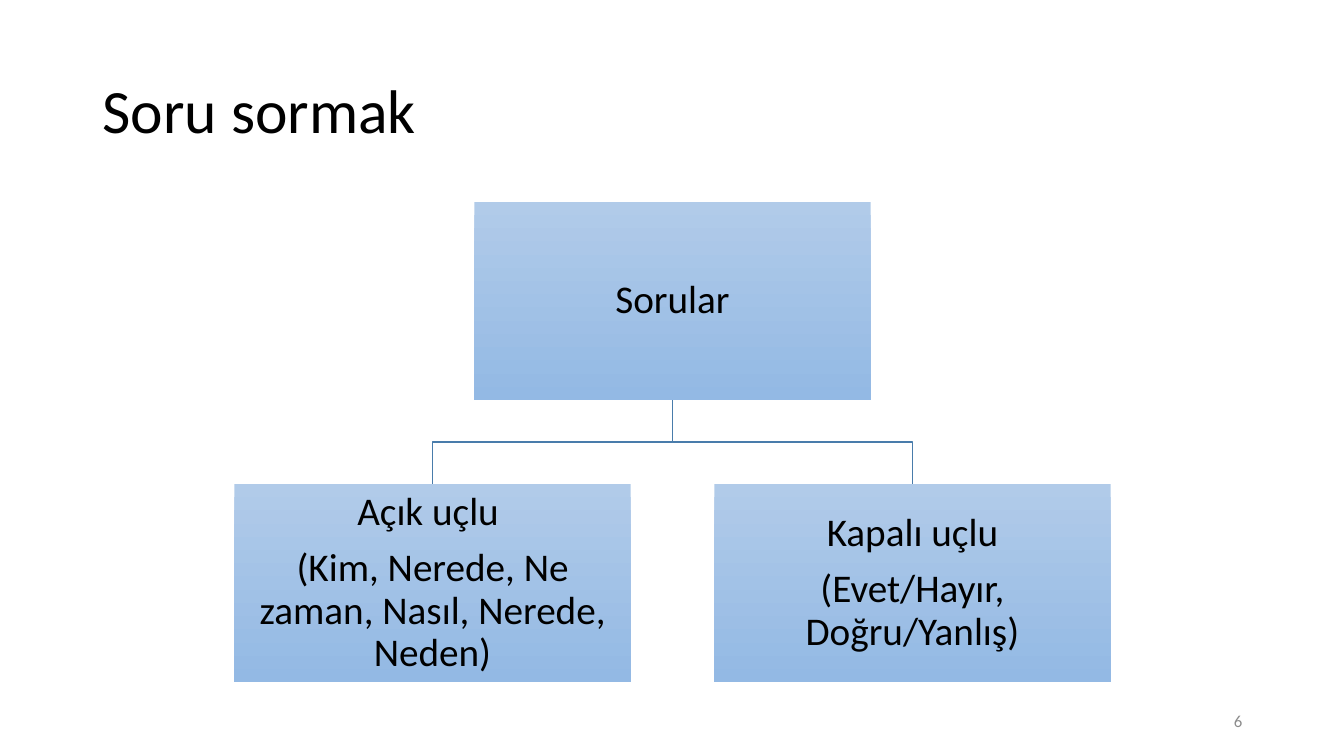
from pptx import Presentation
from pptx.dml.color import RGBColor
from pptx.enum.shapes import MSO_SHAPE
from pptx.enum.text import MSO_ANCHOR, PP_ALIGN
from pptx.util import Inches, Pt

BLACK = RGBColor(0x00, 0x00, 0x00)
GREY = RGBColor(0x8C, 0x8C, 0x8C)
LINE_BLUE = RGBColor(0x49, 0x7C, 0xAB)
GRADIENT = (RGBColor(0xB1, 0xCB, 0xE9), RGBColor(0x93, 0xB9, 0xE4))

BOX_WIDTH, BOX_HEIGHT = 3.93, 1.97
COLUMN_GAP, ROW_GAP = 0.83, 0.83
ROOT = ["Sorular"]
BRANCHES = [
    ["Açık uçlu ", "(Kim, Nerede, Ne zaman, Nasıl, Nerede, Neden)"],
    ["Kapalı uçlu", "(Evet/Hayır, Doğru/Yanlış)"],
]


def write_text(shape, lines, size, color, alignment, line_spacing=0.9, space_after=0):
    """Fill a shape with vertically centred paragraphs of one style."""
    frame = shape.text_frame
    frame.word_wrap = True
    frame.vertical_anchor = MSO_ANCHOR.MIDDLE
    frame.text = "\n".join(lines)
    for paragraph in frame.paragraphs:
        paragraph.alignment = alignment
        paragraph.line_spacing = line_spacing
        paragraph.space_after = Pt(space_after)
        paragraph.font.name = "Calibri"
        paragraph.font.size = Pt(size)
        paragraph.font.color.rgb = color


def add_label(slide, left, top, width, height, text, **style):
    """Add a plain text box."""
    label = slide.shapes.add_textbox(Inches(left), Inches(top), Inches(width), Inches(height))
    write_text(label, [text], **style)


def add_node(slide, left, top, lines):
    """Add one gradient box of the tree."""
    node = slide.shapes.add_shape(
        MSO_SHAPE.RECTANGLE, Inches(left), Inches(top), Inches(BOX_WIDTH), Inches(BOX_HEIGHT))
    node.shadow.inherit = False
    node.line.fill.background()
    node.fill.gradient()
    node.fill.gradient_angle = 270
    for stop, color in zip(node.fill.gradient_stops, GRADIENT):
        stop.color.rgb = color
    frame = node.text_frame
    frame.margin_left = frame.margin_right = Inches(0.02)
    frame.margin_top = frame.margin_bottom = Inches(0.02)
    write_text(node, lines, 28, BLACK, PP_ALIGN.CENTER, space_after=10)


def add_branch_line(slide, start_x, end_x, top):
    """Add a stepped line from the root down to a branch."""
    middle, bottom = top + ROW_GAP / 2, top + ROW_GAP
    builder = slide.shapes.build_freeform(Inches(start_x), Inches(top))
    corners = [(start_x, middle), (end_x, middle), (end_x, bottom)]
    builder.add_line_segments([(Inches(x), Inches(y)) for x, y in corners], close=False)
    line = builder.convert_to_shape()
    line.shadow.inherit = False
    line.fill.background()
    line.line.color.rgb = LINE_BLUE
    line.line.width = Pt(1)


def add_tree(slide, left, top, width):
    """Place the root above evenly spaced branches, centred in the width."""
    center = left + width / 2
    root_bottom = top + BOX_HEIGHT
    step = BOX_WIDTH + COLUMN_GAP
    centers = [center + (index - (len(BRANCHES) - 1) / 2) * step for index in range(len(BRANCHES))]
    for branch_center in centers:
        add_branch_line(slide, center, branch_center, root_bottom)
    add_node(slide, center - BOX_WIDTH / 2, top, ROOT)
    for branch_center, lines in zip(centers, BRANCHES):
        add_node(slide, branch_center - BOX_WIDTH / 2, root_bottom + ROW_GAP, lines)


def main():
    """Build and save the slide."""
    presentation = Presentation()
    presentation.slide_width = Inches(13.33)
    presentation.slide_height = Inches(7.5)
    slide = presentation.slides.add_slide(presentation.slide_layouts[6])
    add_label(slide, 0.92, 0.4, 11.5, 1.45, "Soru sormak",
              size=44, color=BLACK, alignment=PP_ALIGN.LEFT)
    add_tree(slide, 0.92, 2, 11.5)
    add_label(slide, 9.42, 6.95, 3, 0.4, "6",
              size=12, color=GREY, alignment=PP_ALIGN.RIGHT, line_spacing=1.0)
    presentation.save("out.pptx")


if __name__ == "__main__":
    main()
